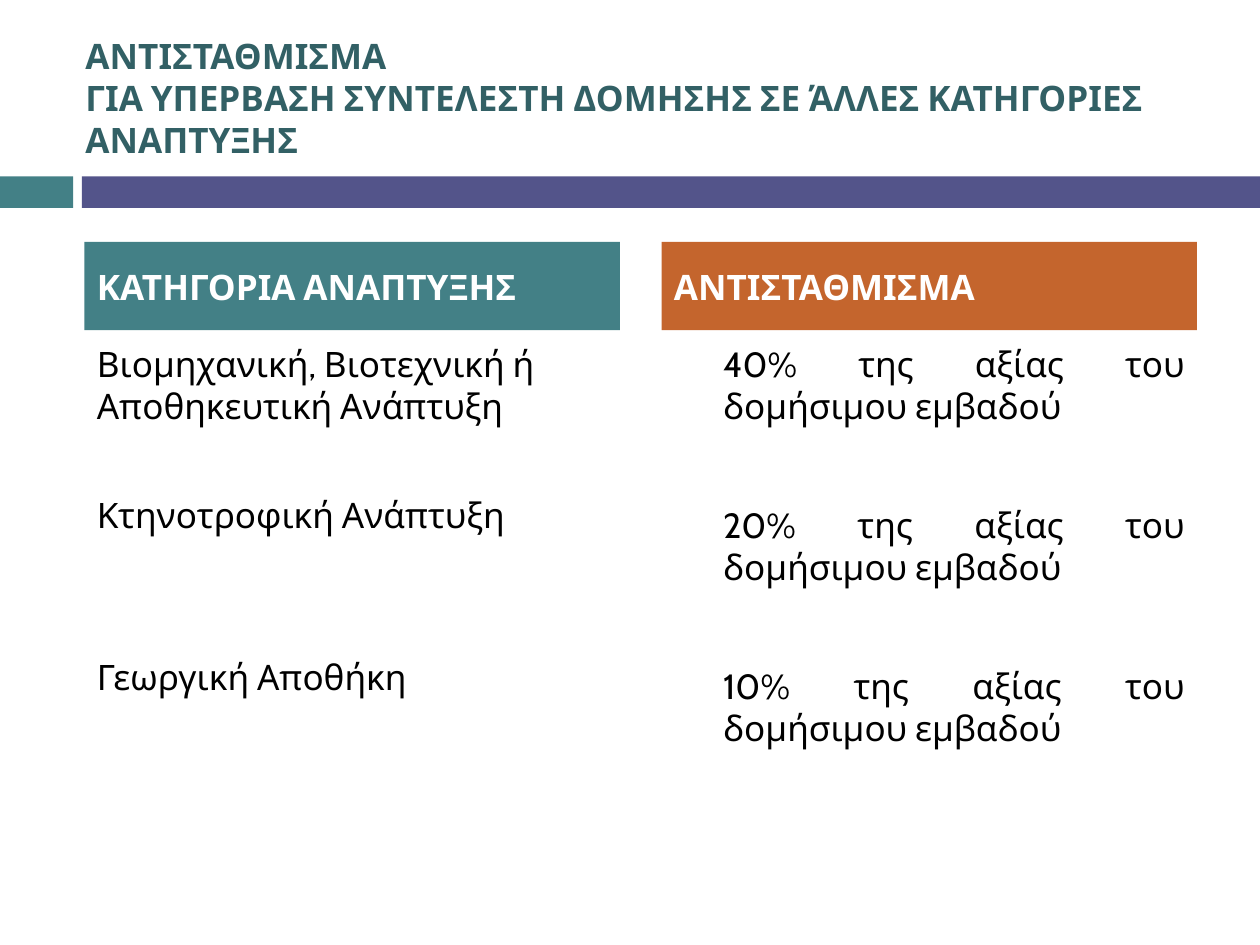
from pptx import Presentation
from pptx.dml.color import RGBColor
from pptx.enum.shapes import MSO_SHAPE
from pptx.enum.text import MSO_ANCHOR, PP_ALIGN
from pptx.util import Inches, Pt

TEAL = RGBColor(0x43, 0x80, 0x86)
DARK_TEAL = RGBColor(0x32, 0x60, 0x65)
PURPLE = RGBColor(0x53, 0x54, 0x8A)
ORANGE = RGBColor(0xC4, 0x65, 0x2D)
WHITE = RGBColor(0xFF, 0xFF, 0xFF)
BLACK = RGBColor(0, 0, 0)

COLUMN_WIDTH = 4.25
LEFT_COLUMN, RIGHT_COLUMN = 0.67, 5.25


class SlideBuilder:
    font = {"name": "Cabin", "size": Pt(20)}

    def __init__(self, slide):
        self.s = slide

    def set_text(self, sp, paragraphs, color, bold=False, anchor=MSO_ANCHOR.TOP,
                 alignment=PP_ALIGN.LEFT, indent=0):
        """Fill a shape with (text, points before) paragraphs."""
        tf = sp.text_frame
        tf.word_wrap = True
        tf.vertical_anchor = anchor
        for i, (text, before) in enumerate(paragraphs):
            p = tf.paragraphs[0] if i == 0 else tf.add_paragraph()
            p.text = text
            p.alignment = alignment
            p.space_before = Pt(before)
            if indent:
                p._p.get_or_add_pPr().set("marL", str(Inches(indent)))
            for r in p.runs:
                for name, value in {**self.font, "bold": bold}.items():
                    setattr(r.font, name, value)
                r.font.color.rgb = color

    def bar(self, left, top, width, height, fill):
        sp = self.s.shapes.add_shape(MSO_SHAPE.RECTANGLE, Inches(left), Inches(top),
                                     Inches(width), Inches(height))
        sp.shadow.inherit = False
        sp.fill.solid()
        sp.fill.fore_color.rgb = fill
        sp.line.fill.background()
        return sp

    def text(self, left, top, width, height, paragraphs, color, **options):
        sp = self.s.shapes.add_textbox(Inches(left), Inches(top),
                                       Inches(width), Inches(height))
        self.set_text(sp, paragraphs, color, **options)

    def column(self, left, heading, fill, paragraphs, **options):
        header = self.bar(left, 1.92, COLUMN_WIDTH, 0.7, fill)
        self.set_text(header, [(heading, 0)], WHITE, bold=True,
                      anchor=MSO_ANCHOR.MIDDLE)
        self.text(left, 2.67, COLUMN_WIDTH, 3.92, paragraphs, BLACK, **options)


def main():
    prs = Presentation()
    prs.slide_width, prs.slide_height = Inches(10), Inches(7.5)
    slide = SlideBuilder(prs.slides.add_slide(prs.slide_layouts[6]))

    slide.bar(0, 1.4, 0.58, 0.25, TEAL)
    slide.bar(0.65, 1.4, 9.35, 0.25, PURPLE)
    title = ("ΑΝΤΙΣΤΑΘΜΙΣΜΑ\v"
             "ΓΙΑ ΥΠΕΡΒΑΣΗ ΣΥΝΤΕΛΕΣΤΗ ΔΟΜΗΣΗΣ ΣΕ ΆΛΛΕΣ ΚΑΤΗΓΟΡΙΕΣ ΑΝΑΠΤΥΞΗΣ")
    slide.text(0.58, 0.3, 8.92, 0.95, [(title, 0)], DARK_TEAL, bold=True,
               anchor=MSO_ANCHOR.MIDDLE)

    categories = [("Βιομηχανική, Βιοτεχνική ή Αποθηκευτική Ανάπτυξη", 0),
                  ("Κτηνοτροφική Ανάπτυξη", 38),
                  ("Γεωργική Αποθήκη", 69)]
    slide.column(LEFT_COLUMN, "ΚΑΤΗΓΟΡΙΑ ΑΝΑΠΤΥΞΗΣ", TEAL, categories)

    rates = [(f"{rate}% της αξίας του δομήσιμου εμβαδού", before)
             for rate, before in ((40, 0), (20, 44), (10, 44))]
    slide.column(RIGHT_COLUMN, "ΑΝΤΙΣΤΑΘΜΙΣΜΑ", ORANGE, rates,
                 alignment=PP_ALIGN.JUSTIFY, indent=0.39)

    prs.save("out.pptx")


if __name__ == "__main__":
    main()
